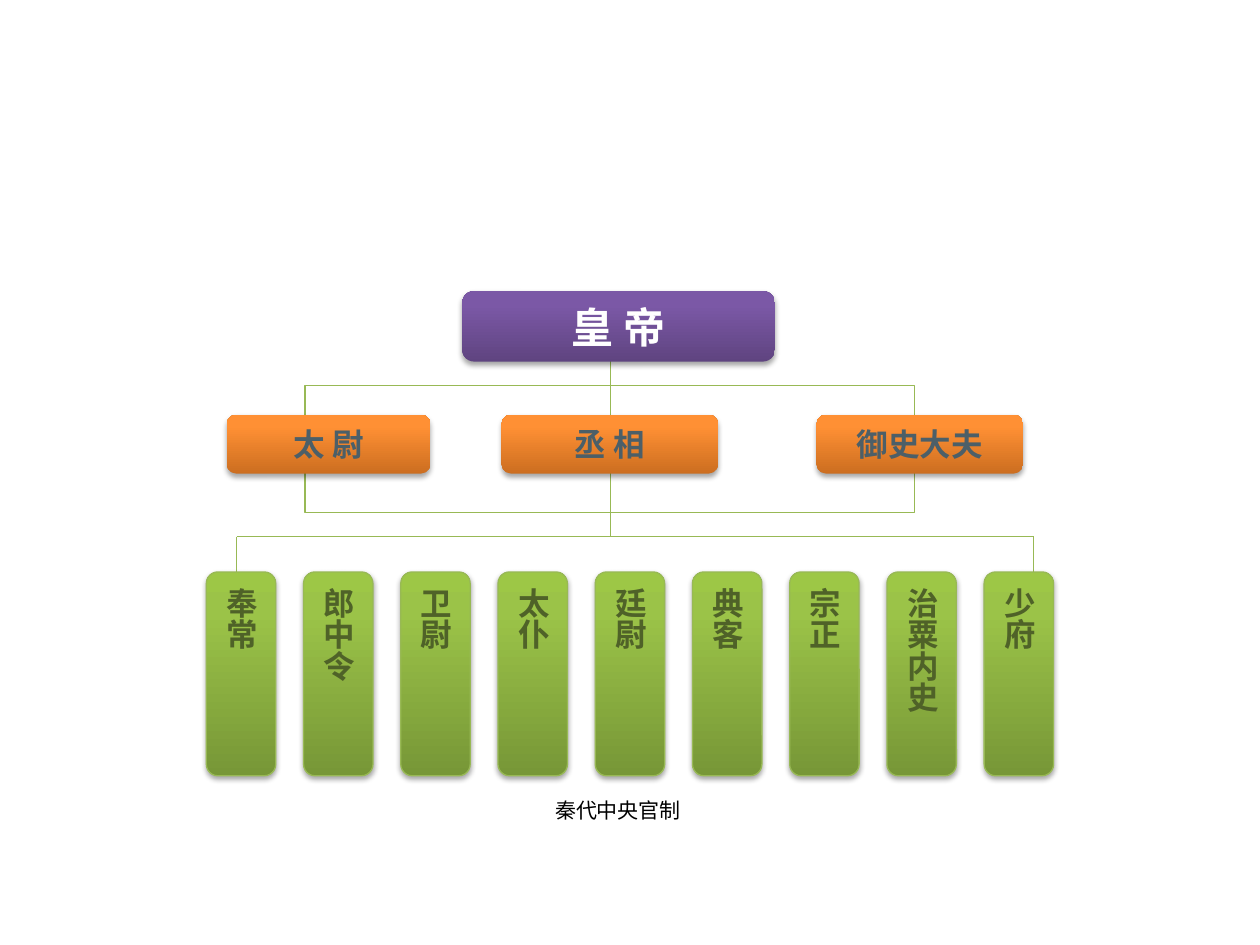
"""Build a chart of the central offices of the Qin dynasty."""
from copy import deepcopy

from lxml import etree
from pptx import Presentation
from pptx.dml.color import RGBColor
from pptx.enum.shapes import MSO_CONNECTOR, MSO_SHAPE
from pptx.enum.text import MSO_ANCHOR, PP_ALIGN
from pptx.oxml.ns import qn
from pptx.util import Cm, Pt

STRAIGHT = MSO_CONNECTOR.STRAIGHT
ROUNDED = MSO_SHAPE.FLOWCHART_ALTERNATE_PROCESS
MIDDLE = MSO_ANCHOR.MIDDLE
CENTER = PP_ALIGN.CENTER

FONT = "Noto Sans CJK SC"
WHITE = RGBColor(0xFF, 0xFF, 0xFF)
BLACK = RGBColor(0x00, 0x00, 0x00)
SLATE = RGBColor(0x4C, 0x5F, 0x68)
DARK_GREEN = RGBColor(0x4F, 0x62, 0x28)
LINE_GREEN = RGBColor(0x98, 0xB9, 0x55)
PURPLES = [RGBColor(0x5F, 0x44, 0x80), RGBColor(0x7B, 0x58, 0xA6), RGBColor(0x7C, 0x57, 0xA8)]
ORANGES = [RGBColor(0xCC, 0x6E, 0x20), RGBColor(0xFF, 0x90, 0x34), RGBColor(0xFF, 0x91, 0x36)]
GREENS = [RGBColor(0x77, 0x97, 0x37), RGBColor(0x9B, 0xC3, 0x48), RGBColor(0x9D, 0xC7, 0x46)]


def write(box, text, size, color, bold):
    para = box.text_frame.paragraphs[0]
    para.alignment = CENTER
    span = para.add_run()
    span.text = text
    span.font.size = Pt(size)
    span.font.bold = bold
    span.font.color.rgb = color
    span.font.name = FONT
    etree.SubElement(span._r.get_or_add_rPr(), qn("a:ea"), typeface=FONT)


def add_office(text, left, top, width, height, colors, size, text_color):
    box = page.shapes.add_shape(ROUNDED, Cm(left), Cm(top), Cm(width), Cm(height))
    box.fill.gradient()
    box.fill.gradient_angle = 90
    stop_list = box.fill._xPr.find(qn("a:gradFill")).find(qn("a:gsLst"))
    stop_list.append(deepcopy(stop_list[-1]))
    for stop, position, color in zip(box.fill.gradient_stops, (0, 0.8, 1), colors):
        stop.position = position
        stop.color.rgb = color
    box.line.fill.background()
    box.shadow.inherit = False
    effects = box._element.spPr.find(qn("a:effectLst"))
    shadow = etree.SubElement(effects, qn("a:outerShdw"), blurRad="39400", dist="22900",
                              dir="5400000", rotWithShape="0")
    shade = etree.SubElement(shadow, qn("a:srgbClr"), val="000000")
    etree.SubElement(shade, qn("a:alpha"), val="35000")
    box.text_frame.word_wrap = False
    box.text_frame.vertical_anchor = MIDDLE
    write(box, text, size, text_color, True)
    return box


deck = Presentation()
deck.slide_width = Cm(25.4)
deck.slide_height = Cm(19.05)
page = deck.slides.add_slide(deck.slide_layouts[6])
page.background.fill.solid()
page.background.fill.fore_color.rgb = WHITE

fork_left, fork_right, trunk = 6.15, 18.44, 12.31
rail_left, rail_right, rail_top = 4.77, 20.84, 10.82

for bar, tip in ((10.33, 9.35), (7.77, 8.74)):
    builder = page.shapes.build_freeform(Cm(fork_left), Cm(tip))
    corners = [(fork_left, bar), (fork_right, bar), (fork_right, tip)]
    builder.add_line_segments([(Cm(x), Cm(y)) for x, y in corners], close=False)
    fork = builder.convert_to_shape()
    fork.fill.background()
    fork.line.color.rgb = LINE_GREEN
    fork.line.width = Pt(0.75)
    fork.shadow.inherit = False

for x1, y1, x2, y2 in (
    (trunk, 7.26, trunk, 8.74),
    (trunk, 9.35, trunk, rail_top),
    (rail_left, rail_top, rail_right, rail_top),
    (rail_left, rail_top, rail_left, 11.63),
    (rail_right, rail_top, rail_right, 11.63),
):
    link = page.shapes.add_connector(STRAIGHT, Cm(x1), Cm(y1), Cm(x2), Cm(y2))
    link.line.color.rgb = LINE_GREEN
    link.line.width = Pt(0.75)
    etree.SubElement(link._element.spPr, qn("a:effectLst"))

add_office("皇 帝", 9.32, 5.87, 6.3, 1.42, PURPLES, 24, WHITE)

for name, left, width in (("太 尉", 4.57, 4.11), ("丞 相", 10.11, 4.37), ("御史大夫", 16.46, 4.17)):
    add_office(name, left, 8.36, width, 1.19, ORANGES, 18, SLATE)

ministers = ["奉常", "郎中令", "卫尉", "太仆", "廷尉", "典客", "宗正", "治粟内史", "少府"]
for index, name in enumerate(ministers):
    column = add_office(name, 4.16 + 1.96 * index, 11.53, 1.4, 4.11, GREENS, 18, DARK_GREEN)
    column.line.color.rgb = LINE_GREEN
    column.line.width = Pt(0.75)
    column.text_frame._txBody.bodyPr.set("vert", "eaVert")

caption = page.shapes.add_textbox(Cm(10.49), Cm(15.95), Cm(3.94), Cm(0.76))
caption.text_frame.word_wrap = True
write(caption, "秦代中央官制", 12, BLACK, False)

deck.save("out.pptx")
